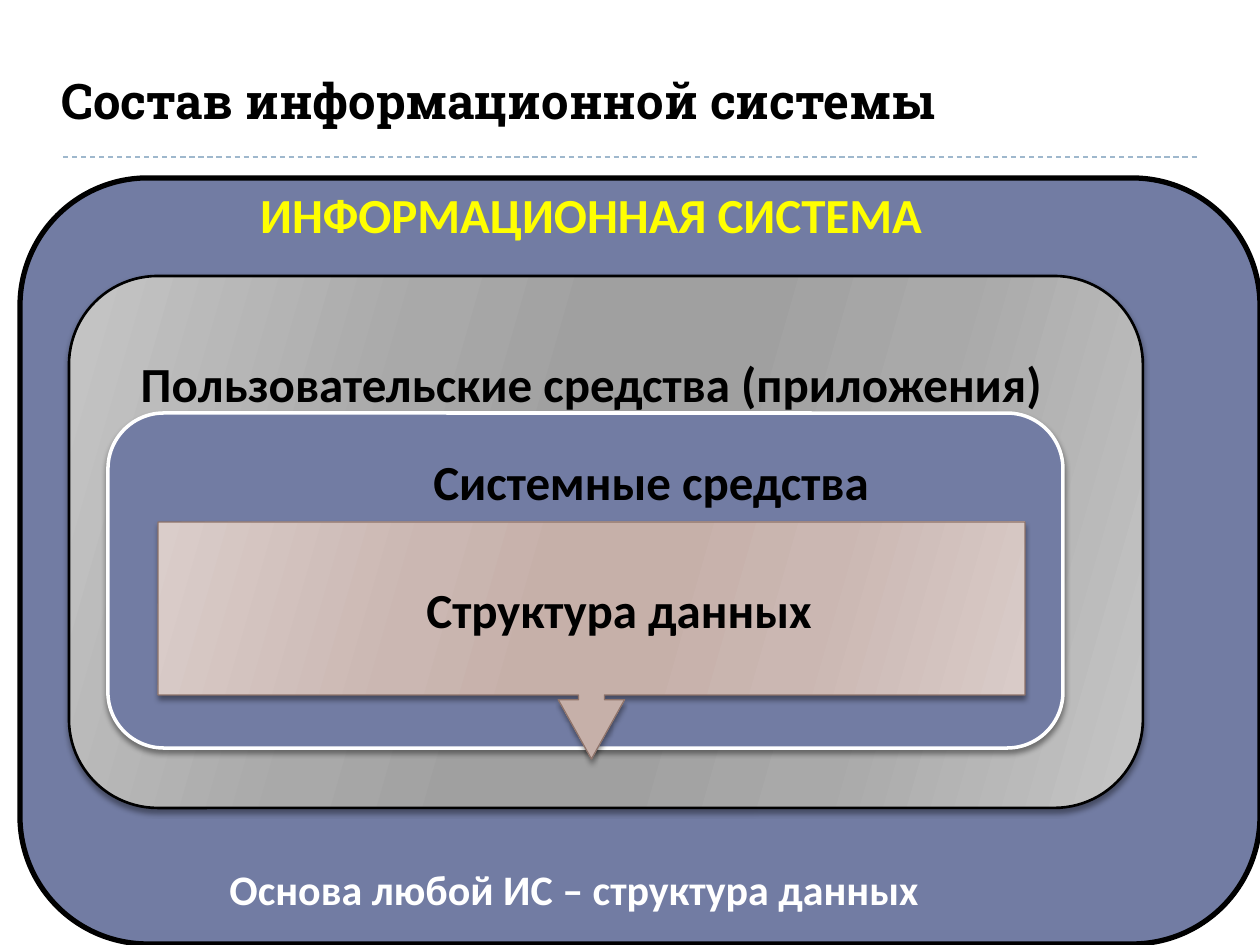
from lxml import etree
from pptx import Presentation
from pptx.dml.color import RGBColor
from pptx.enum.dml import MSO_LINE
from pptx.enum.shapes import MSO_CONNECTOR, MSO_SHAPE
from pptx.enum.text import MSO_ANCHOR, MSO_AUTO_SIZE, PP_ALIGN
from pptx.oxml.ns import qn
from pptx.util import Emu, Pt

ROUND, CALL = MSO_SHAPE.ROUNDED_RECTANGLE, MSO_SHAPE.DOWN_ARROW_CALLOUT
STRAIGHT, DASH, FIXED = MSO_CONNECTOR.STRAIGHT, MSO_LINE.DASH, MSO_AUTO_SIZE.NONE
LEFT, MID = PP_ALIGN.LEFT, PP_ALIGN.CENTER
LOW, CENTER = MSO_ANCHOR.BOTTOM, MSO_ANCHOR.MIDDLE
BLUE, BLACK, WHITE, YELLOW = "727CA3", "000000", "FFFFFF", "FFFF00"
STOPS = (0, 30, 45, 55, 73, 100)
GRAY = ("C5C5C5", "A9A9A9", "A0A0A0")
ROSE = ("DACDCA", "CBB7B2", "C6B0A9")


def px(n):
    return Emu(round(n * 914400 / 126))


def rgb(code):
    return RGBColor.from_string(code)


def sub(node, tag, **vals):
    return etree.SubElement(node, qn(tag), {k: str(v) for k, v in vals.items()})


class Deck:
    """Holds the style and the current slide."""
    face, size = "Calibri", 28

    def __init__(self):
        self.prs = Presentation()
        self.prs.slide_width, self.prs.slide_height = px(1260), px(945)
        self.slide = self.prs.slides.add_slide(self.prs.slide_layouts[1])

    def words(self, par, text, color, face=face, size=size, shift=0, **form):
        run = par.add_run()
        run.text = text
        look = {"name": face, "size": Pt(size), "bold": True}
        for key, val in look.items():
            setattr(run.font, key, val)
        run.font.color.rgb = rgb(color)
        for key, val in form.items():
            setattr(par, key, val)
        # A left margin moves centred text right by half its width
        props = par._p.get_or_add_pPr()
        props.set("marL", str(px(shift)))
        props.set("indent", "0")
        sub(props, "a:buNone")

    def frame(self, shape, **form):
        look = {"word_wrap": True, "auto_size": FIXED, **form}
        for key, val in look.items():
            setattr(shape.text_frame, key, val)
        return shape.text_frame

    def place(self, index, box):
        """Move a placeholder to its spot and to the front."""
        shape = self.slide.placeholders[index]
        for key, val in zip(("left", "top", "width", "height"), box):
            setattr(shape, key, px(val))
        shape.element.getparent().append(shape.element)
        return shape

    def title(self, text, box):
        frame = self.frame(self.place(0, box), vertical_anchor=LOW)
        self.words(frame.paragraphs[0], text, BLACK, "Roboto Slab", alignment=LEFT)

    def body(self, rows, box):
        frame = self.frame(self.place(1, box))
        for i, (text, color, form) in enumerate(rows):
            par = frame.add_paragraph() if i else frame.paragraphs[0]
            self.words(par, text, color, alignment=MID, **form)

    def label(self, text, box, color, size):
        shape = self.slide.shapes.add_textbox(*map(px, box))
        self.words(self.frame(shape).paragraphs[0], text, color, size=size)

    def rule(self, x, y, end, color):
        line = self.slide.shapes.add_connector(
            STRAIGHT, px(x), px(y), px(end), px(y))
        line.line.color.rgb = rgb(color)
        line.line.width = Pt(0.75)
        line.line.dash_style = DASH
        sub(line.element.spPr, "a:effectLst")

    def shape(self, kind, box, fill, edge, width, shade=True):
        item = self.slide.shapes.add_shape(kind, *map(px, box))
        if isinstance(fill, str):
            item.fill.solid()
            item.fill.fore_color.rgb = rgb(fill)
        else:
            self.blend(item, fill)
        item.line.color.rgb = rgb(edge)
        item.line.width = Pt(width)
        item.shadow.inherit = False
        if shade:
            self.shade(item)
        return item

    def blend(self, item, tones):
        """Fill with a mirrored gradient: tones run in, then back out."""
        item.fill.gradient()
        item.fill.gradient_angle = 344
        stops = item.element.spPr.find(".//" + qn("a:gsLst"))
        for old in list(stops):
            stops.remove(old)
        for pos, tone in zip(STOPS, tones + tones[::-1]):
            sub(sub(stops, "a:gs", pos=pos * 1000), "a:srgbClr", val=tone)

    def shade(self, item):
        effect = item.element.spPr.find(qn("a:effectLst"))
        drop = sub(effect, "a:outerShdw", blurRad=Pt(3), dist=Pt(2),
                   dir=90 * 60000, rotWithShape=0)
        sub(sub(drop, "a:srgbClr", val=BLACK), "a:alpha", val=40000)

    def callout(self, text, box, adjust):
        item = self.shape(CALL, box, ROSE, "8E736A", 0.75)
        for i, val in enumerate(adjust):
            item.adjustments[i] = val
        frame = self.frame(item, vertical_anchor=CENTER)
        self.words(frame.paragraphs[0], text, BLACK, shift=55, alignment=MID)


def main():
    deck = Deck()
    deck.rule(63, 157, 1197, "9FB8CD")

    # Nested layers, outermost first
    deck.shape(ROUND, (20, 178, 1240, 766), BLUE, BLACK, 3, shade=False)
    deck.shape(ROUND, (69, 276, 1074, 532), GRAY, BLACK, 1.5)
    deck.shape(ROUND, (108, 413, 955, 335), BLUE, WHITE, 2)

    # Title and layer names
    deck.title("Состав информационной системы", (49, 0, 1134, 136))
    deck.body([
        ("ИНФОРМАЦИОННАЯ СИСТЕМА", YELLOW, {"space_before": Pt(6)}),
        ("Пользовательские средства (приложения)", BLACK,
         {"space_before": Pt(46), "line_spacing": 1.5}),
        ("Системные средства", BLACK,
         {"space_before": Pt(6), "line_spacing": 1.5, "shift": 120}),
    ], (0, 178, 1182, 756))

    # Core and its caption
    deck.callout("Структура данных", (158, 522, 867, 237),
                 (0.11, 0.14, 0.25, 0.73))
    deck.label("Основа любой ИС – структура данных",
               (217, 857, 827, 63), WHITE, 24)
    deck.prs.save("out.pptx")


if __name__ == "__main__":
    main()
